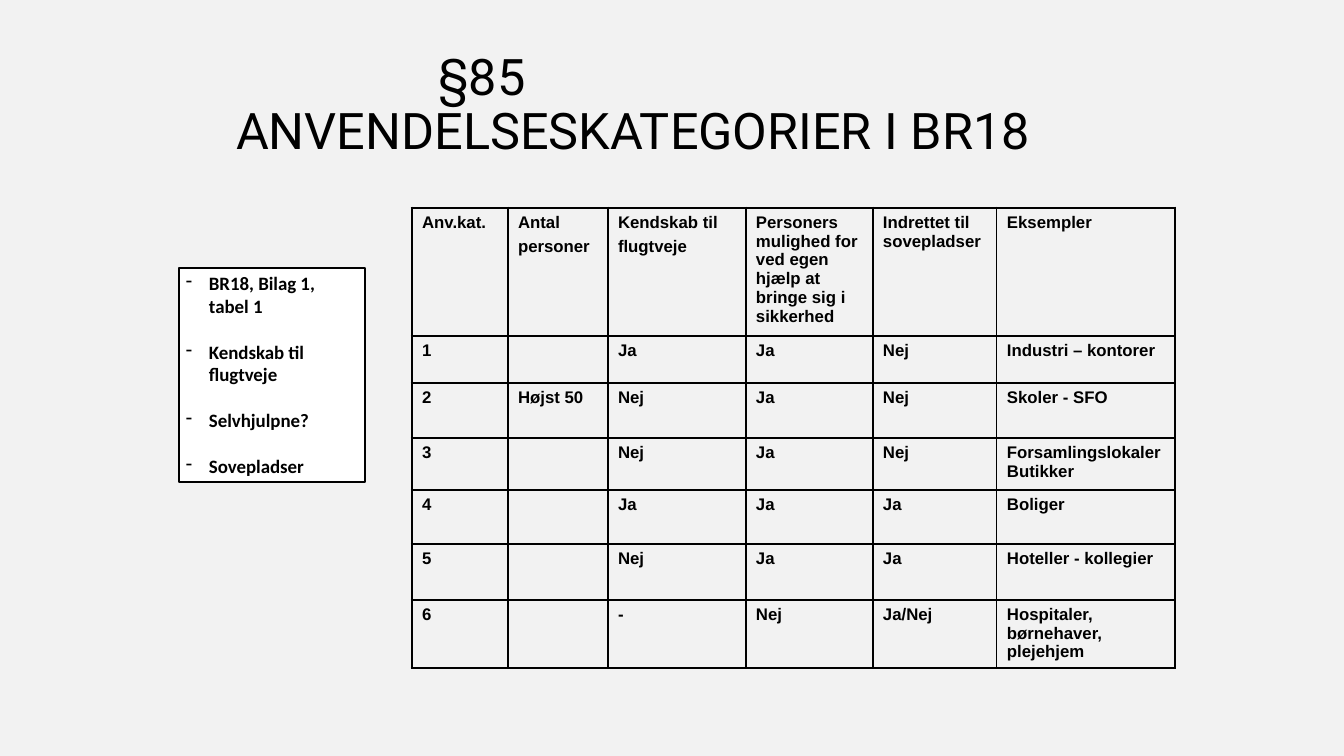
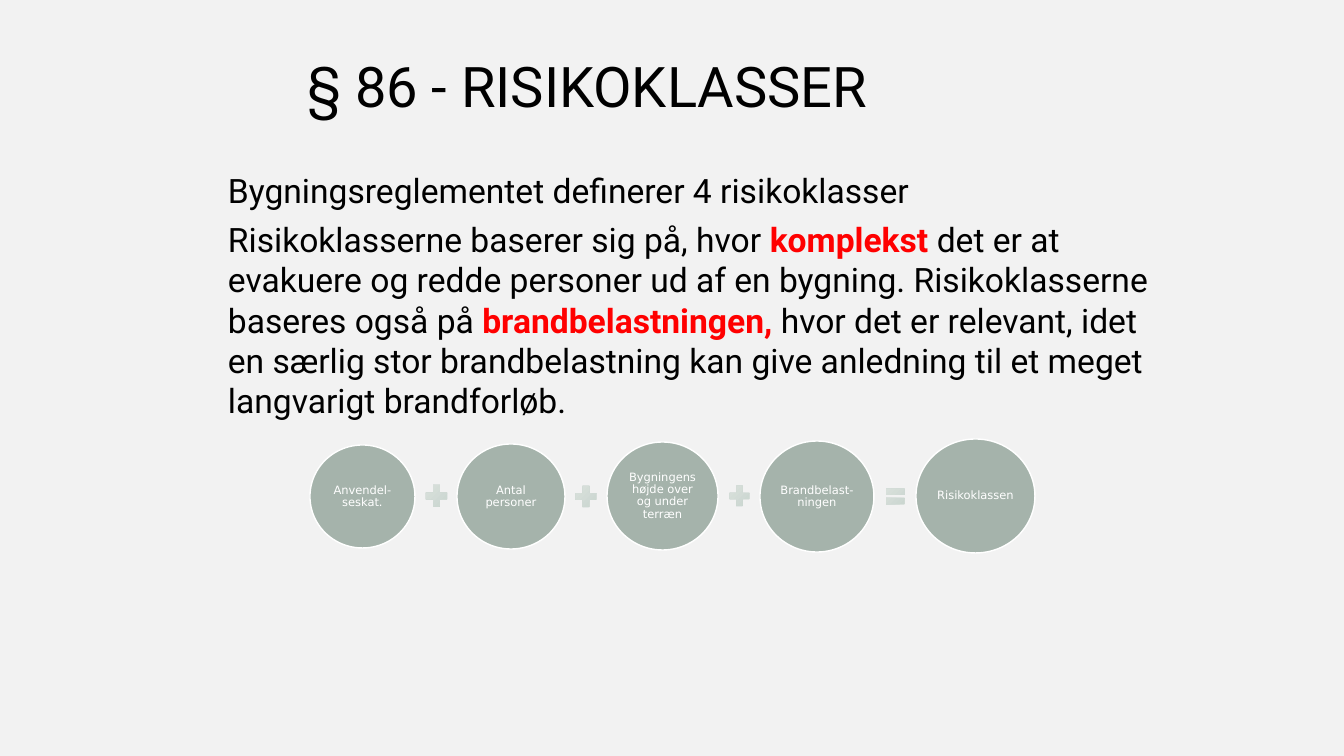
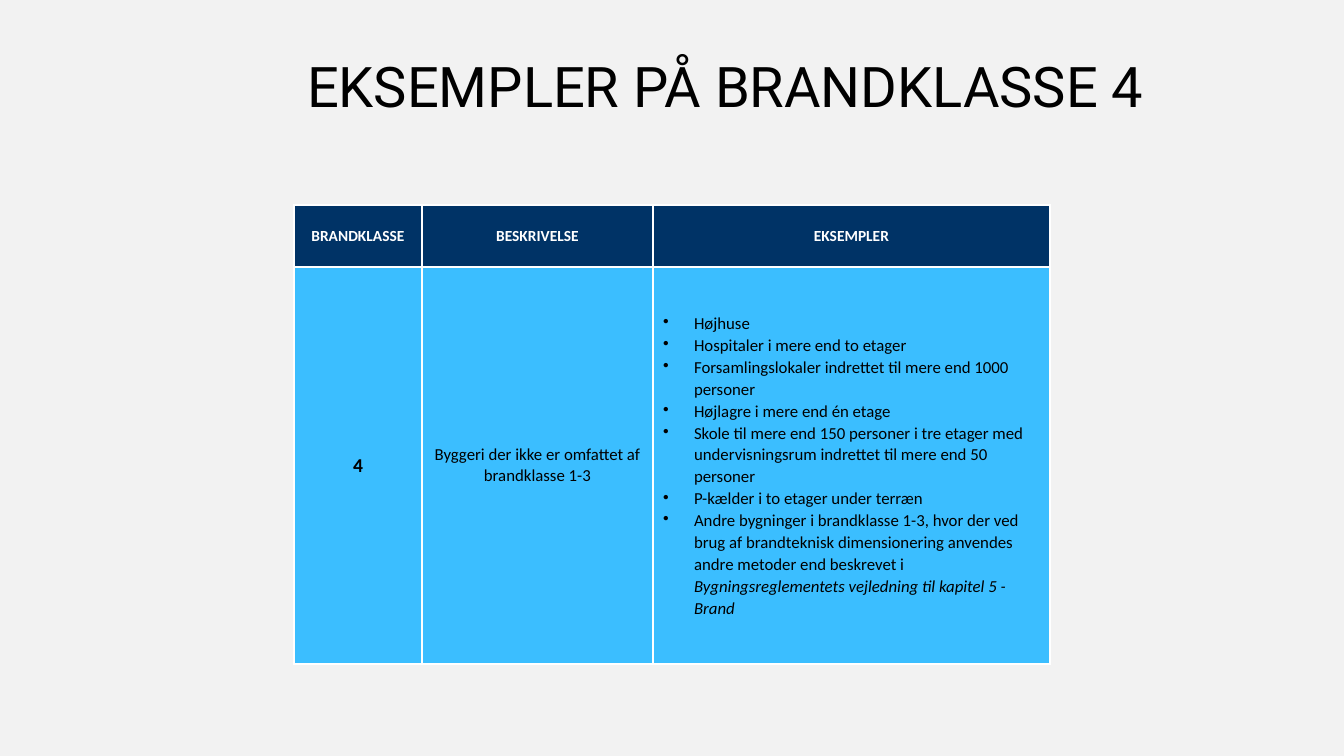
from lxml import etree
from pptx import Presentation
from pptx import util as u
from pptx.dml.color import RGBColor
from pptx.enum import shapes, text
from pptx.oxml.ns import qn

PX = 9071  # EMU in one px
HUE = {"back": "F2F2F2", "ink": "000000", "white": "FFFFFF", "red": "FF0000",
       "sage": "A5B3AB", "mist": "C7D3CC", "pale": "DCE3DF",
       "navy": "003366", "sky": "3BBEFF"}
RGB = {name: RGBColor.from_string(code) for name, code in HUE.items()}
MID = text.PP_ALIGN.CENTER
SHAPE = shapes.MSO_SHAPE


def write(frame, paras, font, hue="ink", form=None, mark=None, hang=0, pad=(0, 0, 0, 0)):
    """Fill a text frame; a paragraph is a string or a list of (string, changes)."""
    frame.word_wrap = True
    sides = ("left", "top", "right", "bottom")
    for side, size in zip(sides, pad):
        setattr(frame, "margin_" + side, size * PX)
    for i, para in enumerate(paras):
        p = frame.paragraphs[0] if i == 0 else frame.add_paragraph()
        for key, val in (form or {}).items():
            if i or key != "space_before":
                setattr(p, key, val)
        if mark:
            props = p._p.get_or_add_pPr()
            props.set("marL", str(hang * PX))
            props.set("indent", str(-hang * PX))
            etree.SubElement(props, qn("a:buChar")).set("char", mark)
        for words, change in [(para, {})] if isinstance(para, str) else para:
            run = p.add_run()
            run.text = words
            look = {**font, "hue": hue, **change}
            run.font.color.rgb = RGB[look.pop("hue")]
            for key, val in look.items():
                setattr(run.font, key, val)


def grid(slide, left, top, cols, rows, line, inner, outer):
    """Add a plain table with ruled cells and return it."""
    table = slide.shapes.add_table(len(rows), len(cols), left * PX, top * PX,
                                   sum(cols) * PX, sum(rows) * PX).table
    table.first_row = table.horz_banding = False
    for band, sizes, key in ((table.columns, cols, "width"), (table.rows, rows, "height")):
        for item, size in zip(band, sizes):
            setattr(item, key, size * PX)
    for r in range(len(rows)):
        for c in range(len(cols)):
            props = table.cell(r, c)._tc.get_or_add_tcPr()
            edges = {"L": c == 0, "R": c == len(cols) - 1,
                     "T": r == 0, "B": r == len(rows) - 1}
            for side, rim in edges.items():
                rule = etree.SubElement(props, qn("a:ln" + side))
                rule.set("w", str(u.Pt(outer if rim else inner)))
                fill = etree.SubElement(rule, qn("a:solidFill"))
                etree.SubElement(fill, qn("a:srgbClr")).set("val", HUE[line])
    return table


deck = Presentation()
deck.slide_width, deck.slide_height = 1344 * PX, 756 * PX
ground = deck.slide_master.background.fill
ground.solid()
ground.fore_color.rgb = RGB["back"]

# Slides and titles
WIDE = (307, 59, 869, 99)
heads = [("§85 ANVENDELSESKATEGORIER I BR18", (236, 52, 898, 95), 36, 202),
         ("§ 86 - RISIKOKLASSER", WIDE, 40, 0),
         ("EKSEMPLER PÅ BRANDKLASSE 4", WIDE, 40, 0)]
pages = []
for head, box, size, inset in heads:
    page = deck.slides.add_slide(deck.slide_layouts[5])
    title = page.shapes.title
    for key, val in zip(("left", "top", "width", "height"), box):
        setattr(title, key, val * PX)
    frame = title.text_frame
    frame.auto_size = text.MSO_AUTO_SIZE.NONE
    frame.vertical_anchor = text.MSO_ANCHOR.TOP
    write(frame, [head], {"name": "Roboto", "size": u.Pt(size)},
          form={"alignment": text.PP_ALIGN.LEFT, "line_spacing": 0.9})
    frame.paragraphs[0]._p.get_or_add_pPr().set("indent", str(inset * PX))
    pages.append(page)
use, risk, fire = pages

# Slide 1: categories of use
PAD = (7, 4, 7, 4)
cells = [
    ["Anv.kat.", "Antal\npersoner", "Kendskab til\nflugtveje",
     "Personers mulighed for ved egen hjælp at bringe sig i sikkerhed",
     "Indrettet til sovepladser", "Eksempler"],
    ["1", "", "Ja", "Ja", "Nej", "Industri – kontorer"],
    ["2", "Højst 50", "Nej", "Ja", "Nej", "Skoler - SFO"],
    ["3", "", "Nej", "Ja", "Nej", "Forsamlingslokaler Butikker"],
    ["4", "", "Ja", "Ja", "Ja", "Boliger"],
    ["5", "", "Nej", "Ja", "Ja", "Hoteller - kollegier"],
    ["6", "", "-", "Nej", "Ja/Nej", "Hospitaler, børnehaver, plejehjem"],
]
table = grid(use, 412, 208, (96, 100, 138, 127, 124, 178),
             (128, 47, 55, 52, 54, 56, 68), "ink", 1, 2.25)
for r, row in enumerate(cells):
    for c, words in enumerate(row):
        cell = table.cell(r, c)
        cell.fill.solid()
        cell.fill.fore_color.rgb = RGB["back"]
        if words:
            write(cell.text_frame, words.split("\n"),
                  {"name": "Arial", "size": u.Pt(12), "bold": True},
                  form={"space_before": u.Pt(4)}, pad=PAD)

note = use.shapes.add_shape(SHAPE.RECTANGLE, 179 * PX, 268 * PX, 186 * PX, 214 * PX)
note.shadow.inherit = False
note.fill.solid()
note.fill.fore_color.rgb = RGB["white"]
note.line.color.rgb = RGB["ink"]
note.line.width = u.Pt(1)
note.text_frame.vertical_anchor = text.MSO_ANCHOR.TOP
write(note.text_frame,
      ["BR18, Bilag 1, tabel 1", "Kendskab til flugtveje", "Selvhjulpne?", "Sovepladser"],
      {"name": "Calibri", "size": u.Pt(13.5), "bold": True},
      form={"alignment": text.PP_ALIGN.LEFT, "space_before": u.Pt(16.5)},
      mark="-", hang=23, pad=PAD)

# Slide 2: risk classes
KEY = {"hue": "red", "bold": True}
body = risk.shapes.add_textbox(228 * PX, 170 * PX, 949 * PX, 260 * PX)
write(body.text_frame, [
    "Bygningsreglementet definerer 4 risikoklasser",
    [("Risikoklasserne baserer sig på, hvor ", {}), ("komplekst ", KEY),
     ("det er at evakuere og redde personer ud af en bygning. "
      "Risikoklasserne baseres også på ", {}),
     ("brandbelastningen, ", KEY),
     ("hvor det er relevant, idet en særlig stor brandbelastning kan give "
      "anledning til et meget langvarigt brandforløb.", {})],
], {"name": "Roboto", "size": u.Pt(24)}, form={"space_after": u.Pt(6)})

PLUS, SAME = SHAPE.MATH_PLUS, SHAPE.MATH_EQUAL
chain = [("Anvendel-seskat.", 105, 103, PLUS, 29, 30),
         ("Antal personer", 108, 105, PLUS, 28, 29),
         ("Bygningens højde over og under terræn", 111, 108, PLUS, 27, 28),
         ("Brandbelast-ningen", 114, 111, SAME, 25, 27),
         ("Risikoklassen", 119, 114, None, 0, 0)]
left, mid, gap = 310, 496, 42
for words, wide, high, sign, across, tall in chain:
    disc = risk.shapes.add_shape(SHAPE.OVAL, left * PX, (mid - high // 2) * PX,
                                 wide * PX, high * PX)
    disc.shadow.inherit = False
    disc.fill.solid()
    disc.fill.fore_color.rgb = RGB["sage"]
    disc.line.color.rgb = RGB["white"]
    disc.line.width = u.Pt(1)
    disc.text_frame.vertical_anchor = text.MSO_ANCHOR.MIDDLE
    write(disc.text_frame, [words], {"name": "DejaVu Sans", "size": u.Pt(8.2)}, "white",
          form={"alignment": MID, "line_spacing": 0.9})
    left += wide + gap
    if sign:
        join = risk.shapes.add_shape(sign, (left - (gap + across) // 2) * PX,
                                     (mid - tall // 2) * PX, across * PX, tall * PX)
        join.shadow.inherit = False
        join.line.fill.background()
        join.fill.gradient()
        join.fill.gradient_angle = 135
        for stop, hue in zip(join.fill.gradient_stops, ("mist", "pale")):
            stop.color.rgb = RGB[hue]

# Slide 3: fire class 4
table = grid(fire, 294, 205, (128, 231, 397), (62, 397), "white", 1.5, 1.5)
samples = [
    "Højhuse",
    "Hospitaler i mere end to etager",
    "Forsamlingslokaler indrettet til mere end 1000 personer",
    "Højlagre i mere end én etage",
    "Skole til mere end 150 personer i tre etager med undervisningsrum "
    "indrettet til mere end 50 personer",
    "P-kælder i to etager under terræn",
    [("Andre bygninger i brandklasse 1-3, hvor der ved brug af brandteknisk "
      "dimensionering anvendes andre metoder end beskrevet i ", {}),
     ("Bygningsreglementets vejledning til kapitel 5 - Brand", {"italic": True})],
]
center = {"form": {"alignment": MID}, "pad": PAD}
inset = (15, 4, 7, 4)
columns = [
    ("BRANDKLASSE", ["4"], 14, True, center),
    ("BESKRIVELSE", ["Byggeri der ikke er omfattet af brandklasse 1-3"], 12, False,
     {**center, "pad": inset}),
    ("EKSEMPLER", samples, 12, False,
     {"form": {"line_spacing": 1.07}, "mark": "•", "hang": 31, "pad": inset}),
]
for c, (head, paras, size, bold, style) in enumerate(columns):
    parts = [([head], 11, True, "white", "navy", center),
             (paras, size, bold, "ink", "sky", style)]
    for r, (lines, points, heavy, hue, fill, how) in enumerate(parts):
        cell = table.cell(r, c)
        cell.fill.solid()
        cell.fill.fore_color.rgb = RGB[fill]
        cell.vertical_anchor = text.MSO_ANCHOR.MIDDLE
        write(cell.text_frame, lines,
              {"name": "Calibri", "size": u.Pt(points), "bold": heavy}, hue, **how)

deck.save("out.pptx")
